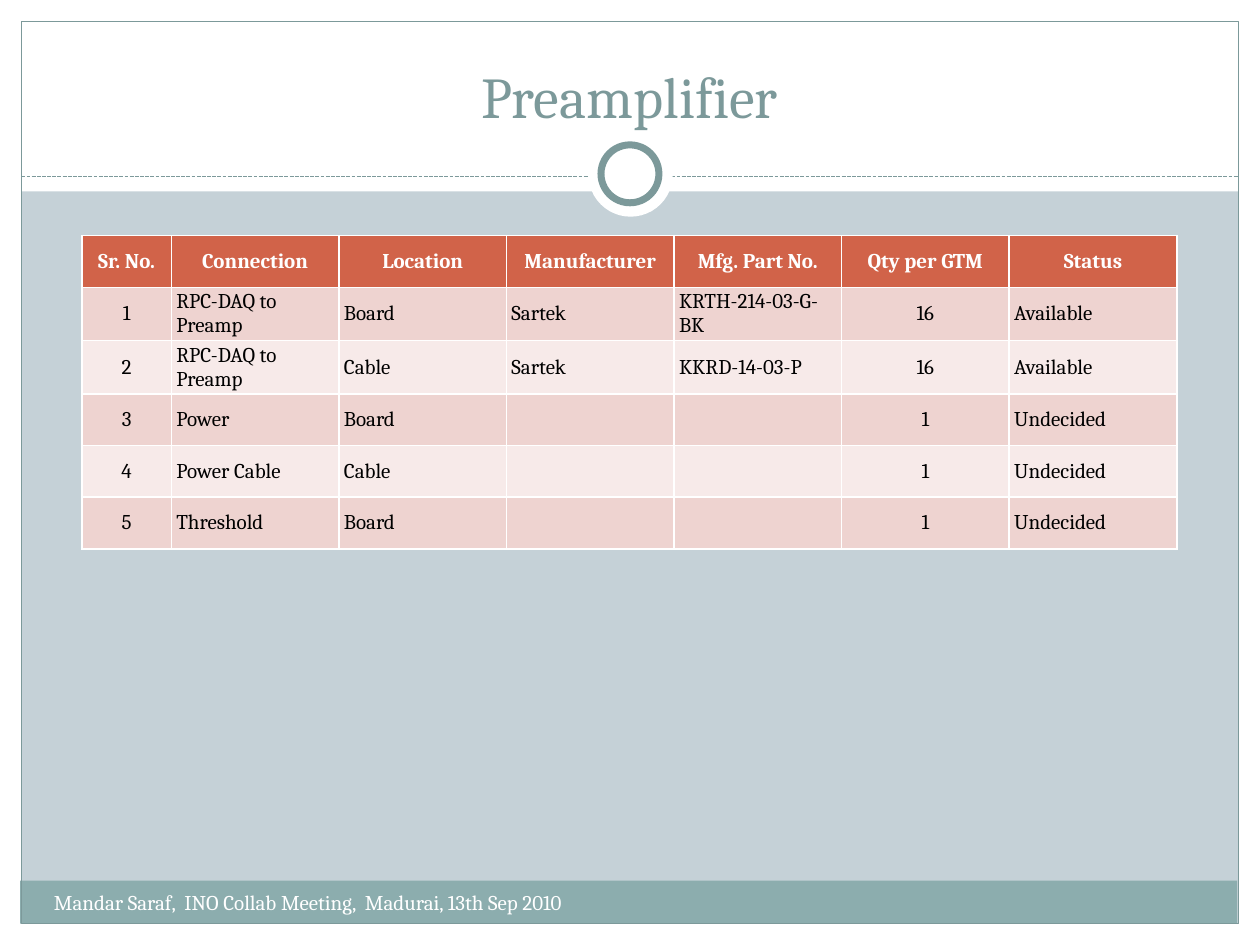
from lxml import etree
from pptx import Presentation
from pptx.dml.color import RGBColor
from pptx.enum import dml, shapes, text
from pptx.oxml import ns
from pptx.util import Inches, Pt

FONT = "Cambria"
WHITE = RGBColor(0xFF, 0xFF, 0xFF)
BLACK = RGBColor(0x00, 0x00, 0x00)
BACKGROUND = RGBColor(0xC5, 0xD1, 0xD7)
TEAL = RGBColor(0x7C, 0x99, 0x9A)
FOOTER_BAND = RGBColor(0x8C, 0xAD, 0xAE)
HEADER = RGBColor(0xD1, 0x63, 0x49)
ROW_FILLS = (RGBColor(0xEE, 0xD3, 0xD0), RGBColor(0xF7, 0xEA, 0xE9))

RECT = shapes.MSO_SHAPE.RECTANGLE
OVAL = shapes.MSO_SHAPE.OVAL
CENTERED_COLUMNS = (0, 5)
COLUMN_WIDTHS = [0.71] + [1.33] * 6
ROW_HEIGHT = 0.41
ROWS = [
    ("Sr. No.", "Connection", "Location", "Manufacturer", "Mfg. Part No.", "Qty per GTM", "Status"),
    ("1", "RPC-DAQ to Preamp", "Board", "Sartek", "KRTH-214-03-G-BK", "16", "Available"),
    ("2", "RPC-DAQ to Preamp", "Cable", "Sartek", "KKRD-14-03-P", "16", "Available"),
    ("3", "Power", "Board", "", "", "1", "Undecided"),
    ("4", "Power Cable", "Cable", "", "", "1", "Undecided"),
    ("5", "Threshold", "Board", "", "", "1", "Undecided"),
]


def add_panel(s, kind, box, fill=None, line=None, width=0.75):
    """Add a preset shape with an optional fill and outline."""
    sp = s.shapes.add_shape(kind, *map(Inches, box))
    sp.shadow.inherit = False
    if fill is None:
        sp.fill.background()
    else:
        sp.fill.solid()
        sp.fill.fore_color.rgb = fill
    if line is None:
        sp.line.fill.background()
    else:
        sp.line.color.rgb = line
        sp.line.width = Pt(width)


def add_divider(s, left, right, y):
    """Add the dashed line below the title."""
    line = s.shapes.add_connector(
        shapes.MSO_CONNECTOR.STRAIGHT, Inches(left), Inches(y), Inches(right), Inches(y))
    line.line.color.rgb = TEAL
    line.line.width = Pt(0.75)
    line.line.dash_style = dml.MSO_LINE.SQUARE_DOT
    etree.SubElement(line._element.spPr, ns.qn("a:effectLst"))


def add_run(p, words, size, color, bold=False):
    """Add one formatted run to a paragraph."""
    r = p.add_run()
    r.text = words
    r.font.name = FONT
    r.font.size = Pt(size)
    r.font.bold = bold
    r.font.color.rgb = color


def add_title(s, words, box):
    """Place the title placeholder in front of the frame."""
    sp = s.shapes.title
    sp.left, sp.top, sp.width, sp.height = map(Inches, box)
    s.shapes._spTree.append(sp._element)
    tf = sp.text_frame
    tf.vertical_anchor = text.MSO_ANCHOR.BOTTOM
    p = tf.paragraphs[0]
    p.alignment = text.PP_ALIGN.CENTER
    add_run(p, words, 33, TEAL)


def add_footer(s, words, box):
    """Add the footer text on its band."""
    tf = s.shapes.add_textbox(*map(Inches, box)).text_frame
    tf.word_wrap = True
    add_run(tf.paragraphs[0], words, 12, WHITE)


def set_borders(cell):
    """Draw white borders around a cell."""
    tc_pr = cell._tc.get_or_add_tcPr()
    for i, side in enumerate("LRTB"):
        ln = etree.Element(ns.qn(f"a:ln{side}"), w=str(Pt(1)))
        fill = etree.SubElement(ln, ns.qn("a:solidFill"))
        etree.SubElement(fill, ns.qn("a:srgbClr"), val=str(WHITE))
        tc_pr.insert(i, ln)


def fill_cell(cell, words, row, column):
    """Format one table cell and write its text."""
    header = row == 0
    cell.fill.solid()
    cell.fill.fore_color.rgb = HEADER if header else ROW_FILLS[(row - 1) % 2]
    cell.vertical_anchor = text.MSO_ANCHOR.MIDDLE
    cell.margin_left = cell.margin_right = Inches(0.04)
    cell.margin_top = cell.margin_bottom = Inches(0.02)
    set_borders(cell)
    p = cell.text_frame.paragraphs[0]
    if header or column in CENTERED_COLUMNS:
        p.alignment = text.PP_ALIGN.CENTER
    if words:
        add_run(p, words, 12, WHITE if header else BLACK, header)


def add_parts_table(s, left, top):
    """Add the table of preamplifier connections."""
    table = s.shapes.add_table(
        len(ROWS), len(COLUMN_WIDTHS), Inches(left), Inches(top),
        Inches(sum(COLUMN_WIDTHS)), Inches(ROW_HEIGHT * len(ROWS))).table
    for column, width in zip(table.columns, COLUMN_WIDTHS):
        column.width = Inches(width)
    for i, row in enumerate(ROWS):
        table.rows[i].height = Inches(ROW_HEIGHT)
        for j, words in enumerate(row):
            fill_cell(table.cell(i, j), words, i, j)


def add_frame(s):
    """Add the margins, bands, outline and ring around the content."""
    for box in ((0, 7.33, 10, 0.17), (0, 0, 10, 1.52), (0, 0, 0.17, 7.5), (9.83, 0, 0.17, 7.5)):
        add_panel(s, RECT, box, WHITE)
    add_panel(s, RECT, (0.16, 6.99, 9.66, 0.34), FOOTER_BAND)
    add_panel(s, RECT, (0.17, 0.17, 9.66, 7.16), line=TEAL)
    add_divider(s, 0.17, 9.83, 1.4)
    add_panel(s, OVAL, (4.67, 1.05, 0.67, 0.67), WHITE)
    add_panel(s, OVAL, (4.77, 1.15, 0.46, 0.46), WHITE, TEAL, 4)


def main():
    """Build the slide and save it."""
    prs = Presentation()
    prs.slide_width, prs.slide_height = Inches(10), Inches(7.5)
    s = prs.slides.add_slide(prs.slide_layouts[5])
    s.background.fill.solid()
    s.background.fill.fore_color.rgb = BACKGROUND
    add_frame(s)
    add_title(s, "Preamplifier", (0.33, 0.25, 9.33, 0.83))
    add_parts_table(s, 0.65, 1.87)
    add_footer(s, "Mandar Saraf,  INO Collab Meeting,  Madurai, 13th Sep 2010", (0.33, 7.01, 6.16, 0.4))
    prs.save("out.pptx")


if __name__ == "__main__":
    main()
